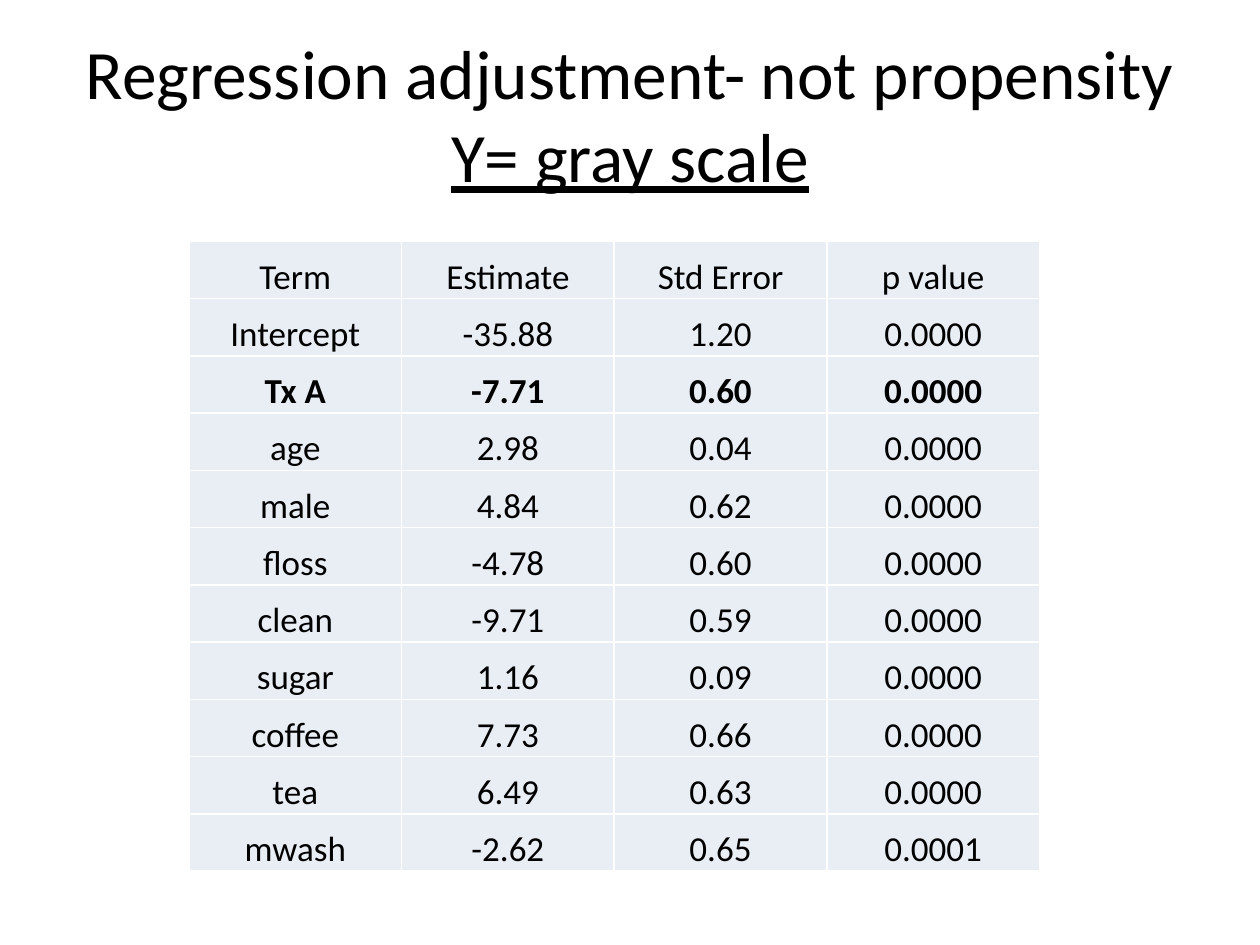
from lxml import etree
from pptx import Presentation
from pptx.dml.color import RGBColor
from pptx.enum.text import MSO_ANCHOR, PP_ALIGN
from pptx.oxml.ns import qn
from pptx.util import Pt

CENTER = PP_ALIGN.CENTER
MIDDLE = MSO_ANCHOR.MIDDLE
BOTTOM = MSO_ANCHOR.BOTTOM

FONT = "Calibri"
COLORS = {"text": "000000", "cell": "E9EDF4", "line": "FFFFFF"}
BOLD_ROW = "Tx A"
ROWS = [
    ("Term", "Estimate", "Std Error", "p value"),
    ("Intercept", "-35.88", "1.20", "0.0000"),
    (BOLD_ROW, "-7.71", "0.60", "0.0000"),
    ("age", "2.98", "0.04", "0.0000"),
    ("male", "4.84", "0.62", "0.0000"),
    ("floss", "-4.78", "0.60", "0.0000"),
    ("clean", "-9.71", "0.59", "0.0000"),
    ("sugar", "1.16", "0.09", "0.0000"),
    ("coffee", "7.73", "0.66", "0.0000"),
    ("tea", "6.49", "0.63", "0.0000"),
    ("mwash", "-2.62", "0.65", "0.0001"),
]


def style(para, size, bold=False):
    para.alignment = CENTER
    for run in para.runs:
        font = run.font
        font.name = FONT
        font.size = Pt(size)
        font.bold = bold
        font.color.rgb = RGBColor.from_string(COLORS["text"])


def add_title(slide, text):
    box = slide.shapes.add_textbox(Pt(36), Pt(21.6), Pt(648), Pt(86.4))
    frame = box.text_frame
    frame.word_wrap = True
    frame.vertical_anchor = MIDDLE
    para = frame.paragraphs[0]
    para.text = text
    style(para, 39.6)
    para.runs[-1].font.underline = True


def add_border(cell):
    props = cell._tc.get_or_add_tcPr()
    for spot, side in enumerate(("lnL", "lnR", "lnT", "lnB")):
        line = etree.Element(qn(f"a:{side}"), w=str(Pt(1)))
        fill = etree.SubElement(line, qn("a:solidFill"))
        etree.SubElement(fill, qn("a:srgbClr"), val=COLORS["line"])
        props.insert(spot, line)


def fill_cell(cell, text, bold):
    cell.margin_left = cell.margin_right = cell.margin_top = Pt(0.72)
    cell.margin_bottom = 0
    cell.vertical_anchor = BOTTOM
    cell.fill.solid()
    cell.fill.fore_color.rgb = RGBColor.from_string(COLORS["cell"])
    para = cell.text_frame.paragraphs[0]
    para.text = text
    style(para, 20, bold)
    add_border(cell)


def add_grid(slide, rows):
    frame = slide.shapes.add_table(
        len(rows), len(rows[0]), Pt(108), Pt(138), Pt(486), Pt(360))
    table = frame.table
    table.first_row = False
    table.horz_banding = False
    for r, row in enumerate(rows):
        for c, text in enumerate(row):
            fill_cell(table.cell(r, c), text, row[0] == BOLD_ROW)


def main():
    deck = Presentation()
    deck.slide_width = Pt(720)
    deck.slide_height = Pt(540)
    slide = deck.slides.add_slide(deck.slide_layouts[6])
    add_title(slide, "Regression adjustment- not propensity\vY= gray scale")
    add_grid(slide, ROWS)
    deck.save("out.pptx")


if __name__ == "__main__":
    main()
